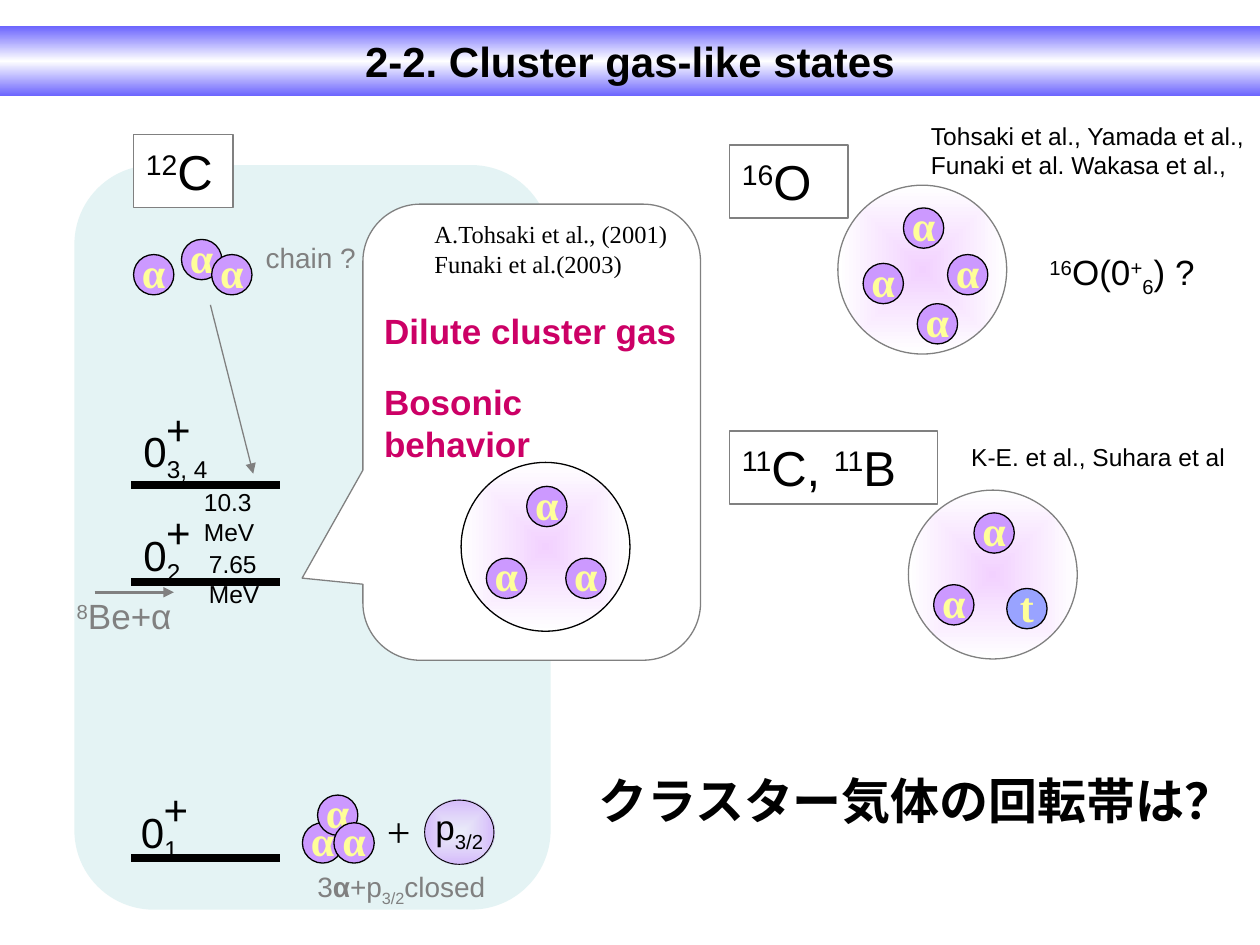
from dataclasses import dataclass
from lxml import etree
from pptx import Presentation
from pptx.dml.color import RGBColor
from pptx.enum import shapes, text
from pptx.oxml.ns import qn
from pptx.util import Inches, Pt

KIND = shapes.MSO_SHAPE
CENTER = text.PP_ALIGN.CENTER
SUP, SUB = 30000, -25000


@dataclass(frozen=True)
class Theme:
    sans: str = "Arial"
    serif: str = "Times New Roman"
    black: str = "000000"
    gray: str = "808080"
    white: str = "FFFFFF"
    panel: str = "E4F3F4"
    accent: str = "CC0066"
    alpha: str = "CC99FF"
    triton: str = "99A3FF"
    symbol: str = "FFFF99"
    banner: tuple = (("6D66FE", 100), ("FFFFFF", 100), ("6D66FE", 100))
    gas: tuple = (("F2D1FF", 100), ("FFFFFF", 100))
    proton: tuple = (("F2E9FF", 53), ("CC99FF", 64))
    headline: int = 28
    title: int = 24
    body: int = 20
    note: int = 16
    small: int = 14


class Slide:
    def __init__(self, page, theme):
        self.page = page
        self.theme = theme

    def set_text(self, shape, lines, size, color=None, font=None, bold=False,
                 align=None, spacing=None, wrap=False, middle=False, grow=False):
        frame = shape.text_frame
        frame.word_wrap = wrap
        if grow:
            frame.auto_size = text.MSO_AUTO_SIZE.SHAPE_TO_FIT_TEXT
        frame.vertical_anchor = text.MSO_ANCHOR.MIDDLE if middle else text.MSO_ANCHOR.TOP
        for index, line in enumerate(lines):
            para = frame.add_paragraph() if index else frame.paragraphs[0]
            para.alignment = align or text.PP_ALIGN.LEFT
            if spacing:
                para.line_spacing = spacing
            para.font.size = Pt(size)
            para.font.name = font or self.theme.sans
            para.font.bold = bold
            para.font.color.rgb = RGBColor.from_string(color or self.theme.black)
            for part in [line] if isinstance(line, str) else line:
                words, baseline = (part, 0) if isinstance(part, str) else part
                span = para.add_run()
                span.text = words
                if baseline:
                    span._r.get_or_add_rPr().set("baseline", str(baseline))

    def label(self, left, top, width, height, lines, size, **style):
        box = self.page.shapes.add_textbox(*map(Inches, (left, top, width, height)))
        self.set_text(box, lines, size, grow=True, **style)
        return box

    def shape(self, kind, left, top, width, height, fill, line=None, weight=0.75):
        shape = self.page.shapes.add_shape(kind, *map(Inches, (left, top, width, height)))
        shape.shadow.inherit = False
        if isinstance(fill, str):
            shape.fill.solid()
            shape.fill.fore_color.rgb = RGBColor.from_string(fill)
        else:
            self.gradient(shape, fill)
        if line:
            shape.line.color.rgb = RGBColor.from_string(line)
            shape.line.width = Pt(weight)
        else:
            shape.line.fill.background()
        return shape

    def gradient(self, shape, stops):
        shape.fill.gradient()
        grad = shape._element.spPr.find(qn("a:gradFill"))
        for child in list(grad):
            grad.remove(child)
        stop_list = etree.SubElement(grad, qn("a:gsLst"))
        for index, (color, opacity) in enumerate(stops):
            position = 100000 * index // (len(stops) - 1)
            stop = etree.SubElement(stop_list, qn("a:gs"), pos=str(position))
            tint = etree.SubElement(stop, qn("a:srgbClr"), val=color)
            if opacity < 100:
                etree.SubElement(tint, qn("a:alpha"), val=str(opacity * 1000))
        if stops is self.theme.banner:
            etree.SubElement(grad, qn("a:lin"), ang="5400000", scaled="0")
        else:
            focus = etree.SubElement(grad, qn("a:path"), path="shape")
            etree.SubElement(focus, qn("a:fillToRect"), l="50000", t="50000", r="50000", b="50000")

    def line(self, start, end, color, weight, arrow=False):
        line = self.page.shapes.add_connector(
            shapes.MSO_CONNECTOR.STRAIGHT, *map(Inches, (*start, *end)))
        line.line.color.rgb = RGBColor.from_string(color)
        line.line.width = Pt(weight)
        if arrow:
            outline = line._element.spPr.find(qn("a:ln"))
            etree.SubElement(outline, qn("a:tailEnd"), type="triangle")
        etree.SubElement(line._element.spPr, qn("a:effectLst"))

    def level(self, left, top, index, line_y):
        self.line((1.04, line_y), (2.22, line_y), self.theme.black, 4.5)
        self.label(left, top, 0.76 if len(index) > 1 else 0.51, 0.5,
                   [["0", (index, SUB)]], self.theme.title)
        self.label(left + 0.18, top - 0.18, 0.4, 0.5, ["+"], self.theme.title)

    def cluster(self, left, top, symbol="α"):
        fill = self.theme.alpha if symbol == "α" else self.theme.triton
        ball = self.shape(KIND.OVAL, left, top, 0.32, 0.32, fill, self.theme.black)
        self.set_text(ball, [symbol], self.theme.title, self.theme.symbol, self.theme.serif,
                      bold=True, align=CENTER, spacing=0.9, middle=True)

    def gas(self, left, top, outline, offsets):
        self.shape(KIND.OVAL, left, top, 1.34, 1.34, self.theme.gas, outline)
        for dx, dy, symbol in offsets:
            self.cluster(left + dx, top + dy, symbol)

    def nucleus(self, left, top, width, spans):
        frame = self.shape(KIND.RECTANGLE, left, top, width, 0.58,
                           self.theme.white, self.theme.gray)
        self.set_text(frame, [spans], self.theme.headline, wrap=True, grow=True)


def main():
    deck = Presentation()
    deck.slide_width, deck.slide_height = Inches(10), Inches(7.5)
    theme = Theme()
    slide = Slide(deck.slides.add_slide(deck.slide_layouts[6]), theme)

    slide.shape(KIND.ROUNDED_RECTANGLE, 0.59, 1.31, 3.78, 5.91, theme.panel)
    banner = slide.shape(KIND.RECTANGLE, 0, 0.21, 10, 0.55, theme.banner)
    slide.set_text(banner, ["2-2. Cluster gas-like states"], theme.title,
                   bold=True, align=CENTER, middle=True)

    for level in ((1.02, 6.35, "1", 6.81), (1.04, 4.15, "2", 4.62), (1.04, 3.33, "3, 4", 3.85)):
        slide.level(*level)
    slide.label(1.52, 3.82, 0.8, 0.57, ["10.3 MeV"], theme.small, wrap=True)
    slide.label(1.56, 4.31, 0.8, 0.57, ["7.65 MeV"], theme.small, wrap=True)

    closed = slide.label(2.4, 6.85, 1.57, 0.37, [["3", "α", "+p", ("3/2", SUB), "closed"]],
                         theme.note, color=theme.gray, align=CENTER)
    closed.text_frame.paragraphs[0].runs[1].font.bold = True
    slide.label(2.97, 6.39, 0.39, 0.46, ["+"], theme.title, font=theme.serif,
                align=CENTER, spacing=0.9)
    ground = ((2.4, 6.53), (2.52, 6.31), (2.65, 6.53))
    chain = ((1.06, 2.02), (1.44, 1.9), (1.68, 2.02))
    for spot in ground + chain:
        slide.cluster(*spot)
    proton = slide.shape(KIND.OVAL, 3.37, 6.35, 0.55, 0.51, theme.proton, theme.black, 0.5)
    slide.set_text(proton, [["p", ("3/2", SUB)]], theme.body,
                   align=CENTER, spacing=0.6, middle=True)

    slide.line((1.67, 2.42), (2.01, 3.76), theme.gray, 0.75, arrow=True)
    slide.line((0.75, 4.7), (1.38, 4.7), theme.gray, 1.5, arrow=True)
    slide.label(0.51, 4.67, 0.98, 0.43, [[("8", SUP), "Be+α"]], theme.body, color=theme.gray)
    slide.label(2.01, 1.86, 0.92, 0.37, ["chain ?"], theme.note, color=theme.gray)

    callout = slide.shape(KIND.ROUNDED_RECTANGULAR_CALLOUT, 2.88, 1.62, 2.68, 3.62,
                          theme.white, theme.gray)
    for index, value in enumerate((-0.68, 0.32, 0.17)):
        callout.adjustments[index] = value
    slide.label(3.35, 1.69, 2.06, 0.57, ["A.Tohsaki et al., (2001)", "Funaki et al.(2003)"],
                theme.small, font=theme.serif, middle=True)
    for top, width, phrase in ((2.41, 2.58, "Dilute cluster gas"), (2.97, 2.53, "Bosonic behavior")):
        slide.label(2.95, top, width, 0.43, [phrase], theme.body, color=theme.accent, bold=True)

    slide.nucleus(1.06, 1.07, 0.79, [("12", SUP), "C"])
    slide.nucleus(5.79, 1.15, 0.94, [("16", SUP), "O"])
    slide.nucleus(5.79, 3.42, 1.65, [("11", SUP), "C, ", ("11", SUP), "B"])
    slide.gas(3.66, 3.67, theme.black, ((0.2, 0.76, "α"), (0.52, 0.19, "α"), (0.83, 0.76, "α")))
    slide.gas(7.21, 3.89, theme.gray, ((0.2, 0.75, "α"), (0.52, 0.18, "α"), (0.78, 0.78, "t")))
    slide.gas(6.65, 1.47, theme.gray,
              ((0.2, 0.62, "α"), (0.52, 0.18, "α"), (0.63, 0.94, "α"), (0.87, 0.55, "α")))

    slide.label(8.23, 1.94, 1.41, 0.44,
                [[("16", SUP), "O(0", ("+", SUP), ("6", SUB), ") ?"]], theme.body)
    slide.label(7.29, 0.91, 2.71, 0.57,
                ["Tohsaki et al., Yamada et al.,", "Funaki et al. Wakasa et al.,"], theme.small)
    slide.label(7.61, 3.46, 2.28, 0.34, ["K-E. et al., Suhara et al"], theme.small)
    slide.label(4.65, 6.07, 5.14, 0.57, ["クラスター気体の回転帯は？"], theme.headline,
                bold=True, wrap=True)
    deck.save("out.pptx")


if __name__ == "__main__":
    main()
